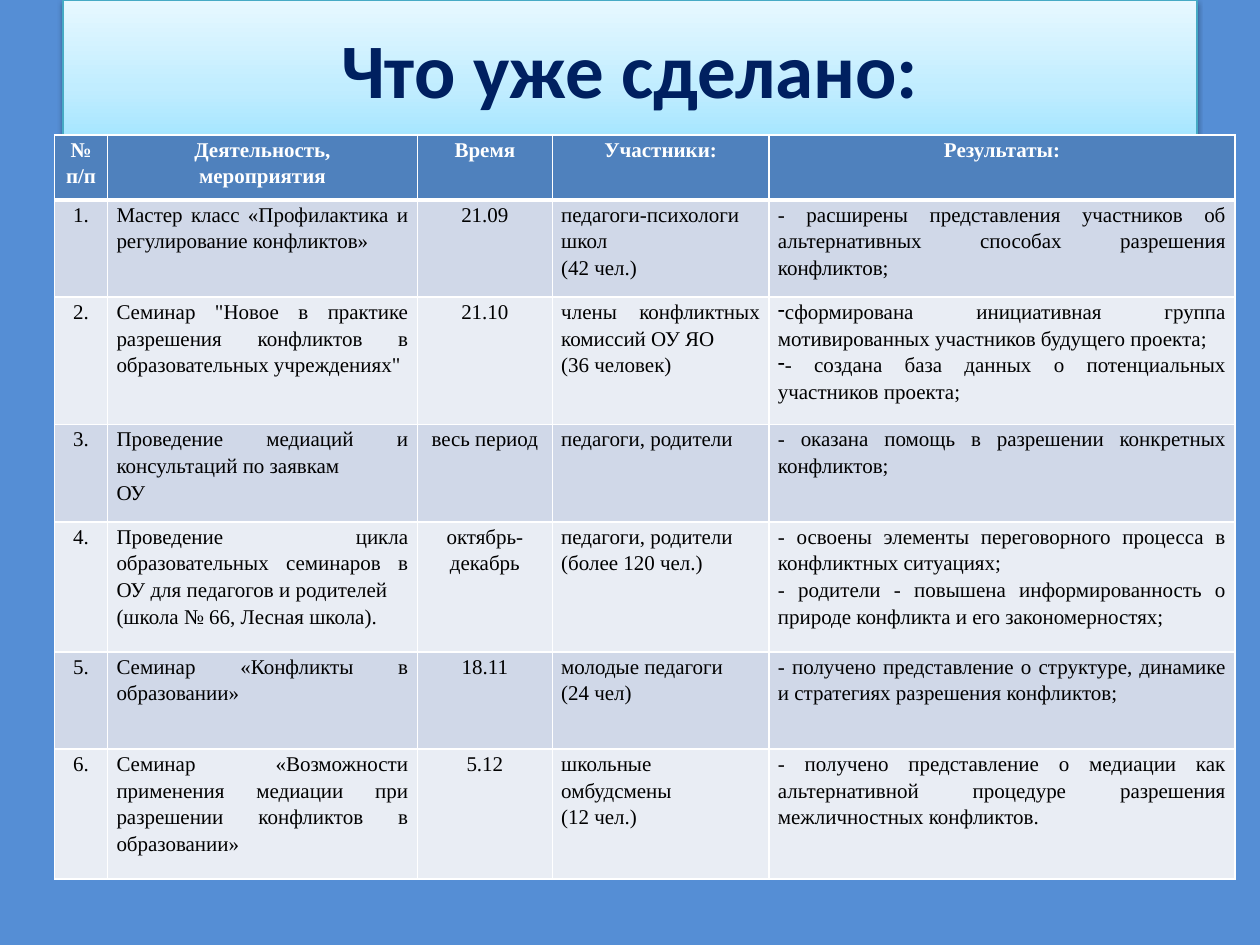
import pptx
import pptx.util
import pptx.dml.color
import pptx.enum.shapes
import pptx.enum.text
import pptx.oxml
import pptx.oxml.ns

Cm, Pt = pptx.util.Cm, pptx.util.Pt
RGBColor = pptx.dml.color.RGBColor
ALIGN = pptx.enum.text.PP_ALIGN
NS = pptx.oxml.ns.nsdecls("a")

BACKGROUND = RGBColor(0x55, 0x8E, 0xD5)
TITLE_TEXT = RGBColor(0x00, 0x20, 0x60)
TITLE_LINE = RGBColor(0x46, 0xAA, 0xC5)
TITLE_BOTTOM = RGBColor(0xA7, 0xE6, 0xFF)
TITLE_MIDDLE = RGBColor(0xC1, 0xED, 0xFF)
TITLE_TOP = RGBColor(0xE7, 0xF8, 0xFF)
HEADER_FILL = RGBColor(0x4F, 0x81, 0xBD)
BAND_FILLS = (RGBColor(0xE9, 0xED, 0xF4), RGBColor(0xD0, 0xD8, 0xE8))
WHITE = RGBColor(0xFF, 0xFF, 0xFF)
BLACK = RGBColor(0x00, 0x00, 0x00)

COLUMN_WIDTHS = (1.07, 6.25, 2.72, 4.37, 9.4)
ROW_HEIGHTS = (1.31, 1.96, 2.57, 1.96, 2.62, 1.96, 2.62)
CENTRED_COLUMNS = (0, 2)
BULLETED_CELL = (2, 4)

ROWS = (
    ("№\nп/п", "Деятельность,\nмероприятия", "Время", "Участники:", "Результаты:"),
    ("1.", "Мастер класс «Профилактика и регулирование конфликтов»", "21.09",
     "педагоги-психологи\nшкол\n(42 чел.)",
     "- расширены представления участников об альтернативных способах разрешения конфликтов;"),
    ("2.", "Семинар \"Новое в практике разрешения конфликтов в образовательных учреждениях\"", "21.10",
     "члены конфликтных комиссий ОУ ЯО\n(36 человек)",
     "сформирована инициативная группа мотивированных участников будущего проекта;\n"
     "- создана база данных о потенциальных участников проекта;"),
    ("3.", "Проведение медиаций и консультаций по заявкам\nОУ", "весь период",
     "педагоги, родители",
     "- оказана помощь в разрешении конкретных конфликтов;"),
    ("4.", "Проведение цикла образовательных семинаров в ОУ для педагогов и родителей\n"
     "(школа № 66, Лесная школа).", "октябрь-декабрь",
     "педагоги, родители\n(более 120 чел.)",
     "- освоены элементы переговорного процесса в конфликтных ситуациях;\n"
     "- родители - повышена информированность о природе конфликта и его закономерностях;"),
    ("5.", "Семинар «Конфликты в образовании»", "18.11",
     "молодые педагоги\n(24 чел)",
     "- получено представление о структуре, динамике и стратегиях разрешения конфликтов;"),
    ("6.", "Семинар «Возможности применения медиации при разрешении конфликтов в образовании»", "5.12",
     "школьные омбудсмены\n(12 чел.)",
     "- получено представление о медиации как альтернативной процедуре разрешения "
     "межличностных конфликтов."),
)


def set_gradient(shape, stops, angle):
    """Fill a shape with a linear gradient of (percent, colour) stops."""
    shape.fill.gradient()
    shape.fill.gradient_angle = angle
    gs_list = shape.fill._fill._gradFill.find(pptx.oxml.ns.qn("a:gsLst"))
    for gs in list(gs_list):
        gs_list.remove(gs)
    for percent, colour in stops:
        gs_list.append(pptx.oxml.parse_xml(
            f'<a:gs {NS} pos="{percent * 1000}"><a:srgbClr val="{colour}"/></a:gs>'))


def set_shadow(shape):
    """Give a shape a soft shadow that falls downwards."""
    shape.shadow.inherit = False
    effects = shape._element.spPr.find(pptx.oxml.ns.qn("a:effectLst"))
    effects.append(pptx.oxml.parse_xml(
        f'<a:outerShdw {NS} blurRad="{Pt(3.1)}" dist="{Pt(1.6)}" dir="5400000" rotWithShape="0">'
        f'<a:srgbClr val="{BLACK}"><a:alpha val="38000"/></a:srgbClr></a:outerShdw>'))


def set_borders(cell, widths):
    """Draw white cell borders with widths in points, keyed by side."""
    tc_pr = cell._tc.get_or_add_tcPr()
    for side, width in widths.items():
        tc_pr.append(pptx.oxml.parse_xml(
            f'<a:ln{side} {NS} w="{Pt(width)}"><a:solidFill><a:srgbClr val="{WHITE}"/>'
            f'</a:solidFill></a:ln{side}>'))


def set_dash_bullet(p):
    """Put a dash bullet directly before the paragraph text."""
    p_pr = p._p.get_or_add_pPr()
    p_pr.set("marL", "0")
    p_pr.set("indent", "0")
    p_pr.insert_element_before(
        pptx.oxml.parse_xml(f'<a:buChar {NS} char="-"/>'), "a:tabLst", "a:defRPr", "a:extLst")


def add_title(s, left, top, width, height):
    """Add the title banner in the given box."""
    sp = s.shapes.add_shape(pptx.enum.shapes.MSO_SHAPE.RECTANGLE, left, top, width, height)
    set_gradient(sp, ((0, TITLE_BOTTOM), (35, TITLE_MIDDLE), (100, TITLE_TOP)), 90)
    sp.line.color.rgb = TITLE_LINE
    sp.line.width = Pt(0.75)
    set_shadow(sp)
    tf = sp.text_frame
    tf.word_wrap = True
    tf.vertical_anchor = pptx.enum.text.MSO_ANCHOR.MIDDLE
    p = tf.paragraphs[0]
    p.text = "Что уже сделано:"
    p.alignment = ALIGN.CENTER
    p.font.name, p.font.size, p.font.bold = "Calibri", Pt(44), True
    p.font.color.rgb = TITLE_TEXT


def fill_cell(cell, text, row, col):
    """Write and style one cell according to its row and column."""
    header = row == 0
    set_borders(cell, {"L": 1, "R": 1, "T": 3 if row == 1 else 1, "B": 3 if header else 1})
    cell.fill.solid()
    cell.fill.fore_color.rgb = HEADER_FILL if header else BAND_FILLS[row % 2]
    cell.margin_left = cell.margin_right = Cm(0.18)
    cell.margin_top = cell.margin_bottom = 0
    cell.text = text
    for p in cell.text_frame.paragraphs:
        p.alignment = ALIGN.CENTER if header or col in CENTRED_COLUMNS else ALIGN.JUSTIFY
        p.line_spacing = 1.15
        p.font.name, p.font.size, p.font.bold = "Times New Roman", Pt(12), header
        p.font.color.rgb = WHITE if header else BLACK
        if (row, col) == BULLETED_CELL:
            set_dash_bullet(p)


def add_activities(s, left, top, width, height):
    """Add the table of activities, its columns and rows shared out over the box."""
    table = s.shapes.add_table(len(ROWS), len(COLUMN_WIDTHS), left, top, width, height).table
    for column, share in zip(table.columns, COLUMN_WIDTHS):
        column.width = int(width * share / sum(COLUMN_WIDTHS))
    for row, share in zip(table.rows, ROW_HEIGHTS):
        row.height = int(height * share / sum(ROW_HEIGHTS))
    for i, texts in enumerate(ROWS):
        for j, text in enumerate(texts):
            fill_cell(table.cell(i, j), text, i, j)


def main():
    """Build the slide and save it."""
    prs = pptx.Presentation()
    prs.slide_width, prs.slide_height = Cm(25.4), Cm(19.05)
    s = prs.slides.add_slide(prs.slide_layouts[6])
    s.background.fill.solid()
    s.background.fill.fore_color.rgb = BACKGROUND
    add_title(s, Cm(1.27), Cm(0), Cm(22.86), Cm(2.72))
    add_activities(s, Cm(1.1), Cm(2.72), Cm(23.8), Cm(15))
    prs.save("out.pptx")


if __name__ == "__main__":
    main()
